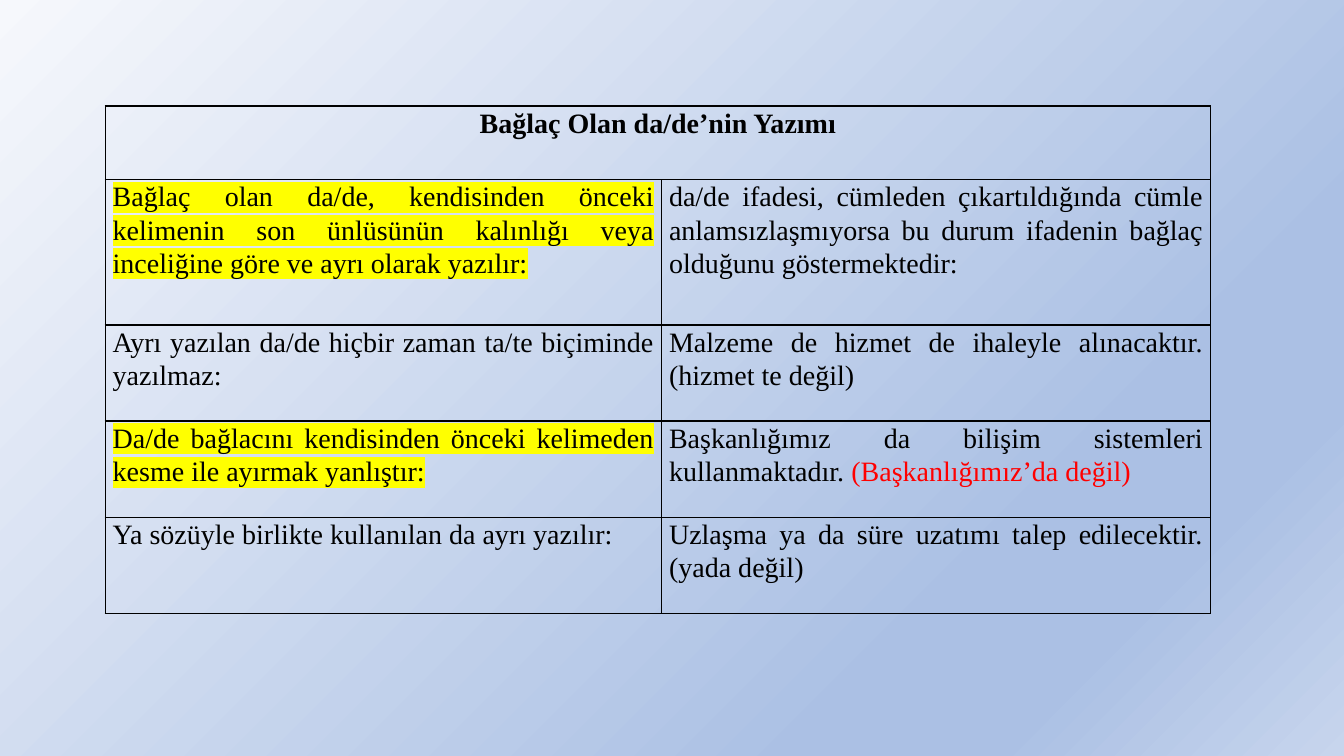
import pptx
import pptx.util
import pptx.dml.color
import pptx.enum.text
import pptx.oxml
import pptx.oxml.ns
from dataclasses import dataclass
from pptx.util import Cm

NS = pptx.oxml.ns.nsdecls("a")
ALIGN = pptx.enum.text.PP_ALIGN


@dataclass(frozen=True)
class Theme:
    font: str = "Times New Roman"
    size: int = 20
    ink: str = "000000"
    mark: str = "FFFF00"
    warn: str = "FF0000"
    stops: tuple = ((0, "F6F8FC"), (74, "ABC0E4"), (83, "ABC0E4"), (100, "C7D5ED"))


THEME = Theme()
HEAD = "Bağlaç Olan da/de’nin Yazımı"

# Each rule: height in cm, marked or not, rule text, example, warning
RULES = [
    (3.66, True,
     "Bağlaç olan da/de, kendisinden önceki kelimenin son ünlüsünün kalınlığı "
     "veya inceliğine göre ve ayrı olarak yazılır:",
     "da/de ifadesi, cümleden çıkartıldığında cümle anlamsızlaşmıyorsa bu durum "
     "ifadenin bağlaç olduğunu göstermektedir:", ""),
    (2.42, False,
     "Ayrı yazılan da/de hiçbir zaman ta/te biçiminde yazılmaz:",
     "Malzeme de hizmet de ihaleyle alınacaktır. (hizmet te değil)", ""),
    (2.42, True,
     "Da/de bağlacını kendisinden önceki kelimeden kesme ile ayırmak yanlıştır:",
     "Başkanlığımız da bilişim sistemleri kullanmaktadır. ",
     "(Başkanlığımız’da değil)"),
    (2.42, False,
     "Ya sözüyle birlikte kullanılan da ayrı yazılır:",
     "Uzlaşma ya da süre uzatımı talep edilecektir. (yada değil)", ""),
]


def color(code):
    return pptx.dml.color.RGBColor.from_string(code)


def paint(slide):
    """Diagonal gradient behind the whole slide."""
    slide.background.fill.gradient()
    grad = slide.element.find(".//" + pptx.oxml.ns.qn("a:gradFill"))
    for part in list(grad):
        grad.remove(part)
    stops = "".join(
        f'<a:gs pos="{pos * 1000}"><a:srgbClr val="{code}"/></a:gs>'
        for pos, code in THEME.stops)
    grad.append(pptx.oxml.parse_xml(f"<a:gsLst {NS}>{stops}</a:gsLst>"))
    grad.append(pptx.oxml.parse_xml(f'<a:lin {NS} ang="2700000" scaled="0"/>'))


def frame(cell):
    """Clear fill, thin margins and a 1 pt line on each side."""
    cell.margin_left = cell.margin_right = Cm(0.19)
    cell.margin_top = cell.margin_bottom = 0
    cell.fill.background()
    props = cell._tc.get_or_add_tcPr()
    for spot, side in enumerate("LRTB"):
        props.insert(spot, pptx.oxml.parse_xml(
            f'<a:ln{side} {NS} w="12700"><a:solidFill><a:srgbClr val="{THEME.ink}"/>'
            f'</a:solidFill></a:ln{side}>'))


def write(cell, text, align=ALIGN.JUSTIFY, bold=False, mark=False, warn=""):
    para = cell.text_frame.paragraphs[0]
    para.alignment = align
    para.line_spacing = 1.07
    para.space_after = pptx.util.Pt(8)
    para.font.name = THEME.font
    para.font.size = pptx.util.Pt(THEME.size)
    para.font.bold = bold
    para.font.color.rgb = color(THEME.ink)
    run = para.add_run()
    run.text = text
    if mark:
        run.font._element.append(pptx.oxml.parse_xml(
            f'<a:highlight {NS}><a:srgbClr val="{THEME.mark}"/></a:highlight>'))
    if warn:
        run = para.add_run()
        run.text = warn
        run.font.color.rgb = color(THEME.warn)


def grid(slide, left, top, width, height):
    """Heading row across both columns, then one row per rule."""
    table = slide.shapes.add_table(
        len(RULES) + 1, 2, left, top, width, height).table
    table.first_row = table.horz_banding = False
    table.columns[0].width = Cm(14.02)
    table.columns[1].width = width - Cm(14.02)
    for cell in table.iter_cells():
        frame(cell)

    # Heading
    table.rows[0].height = height - sum(Cm(rule[0]) for rule in RULES)
    table.cell(0, 0).merge(table.cell(0, 1))
    write(table.cell(0, 0), HEAD, ALIGN.CENTER, bold=True)

    # Rules and examples
    for row, (tall, mark, rule, sample, warn) in enumerate(RULES, 1):
        table.rows[row].height = Cm(tall)
        write(table.cell(row, 0), rule, mark=mark)
        write(table.cell(row, 1), sample, warn=warn)


def main():
    deck = pptx.Presentation()
    deck.slide_width, deck.slide_height = Cm(33.87), Cm(19.05)
    slide = deck.slides.add_slide(deck.slide_layouts[6])
    paint(slide)
    grid(slide, Cm(2.65), Cm(2.67), Cm(27.86), Cm(12.78))
    deck.save("out.pptx")


if __name__ == "__main__":
    main()
